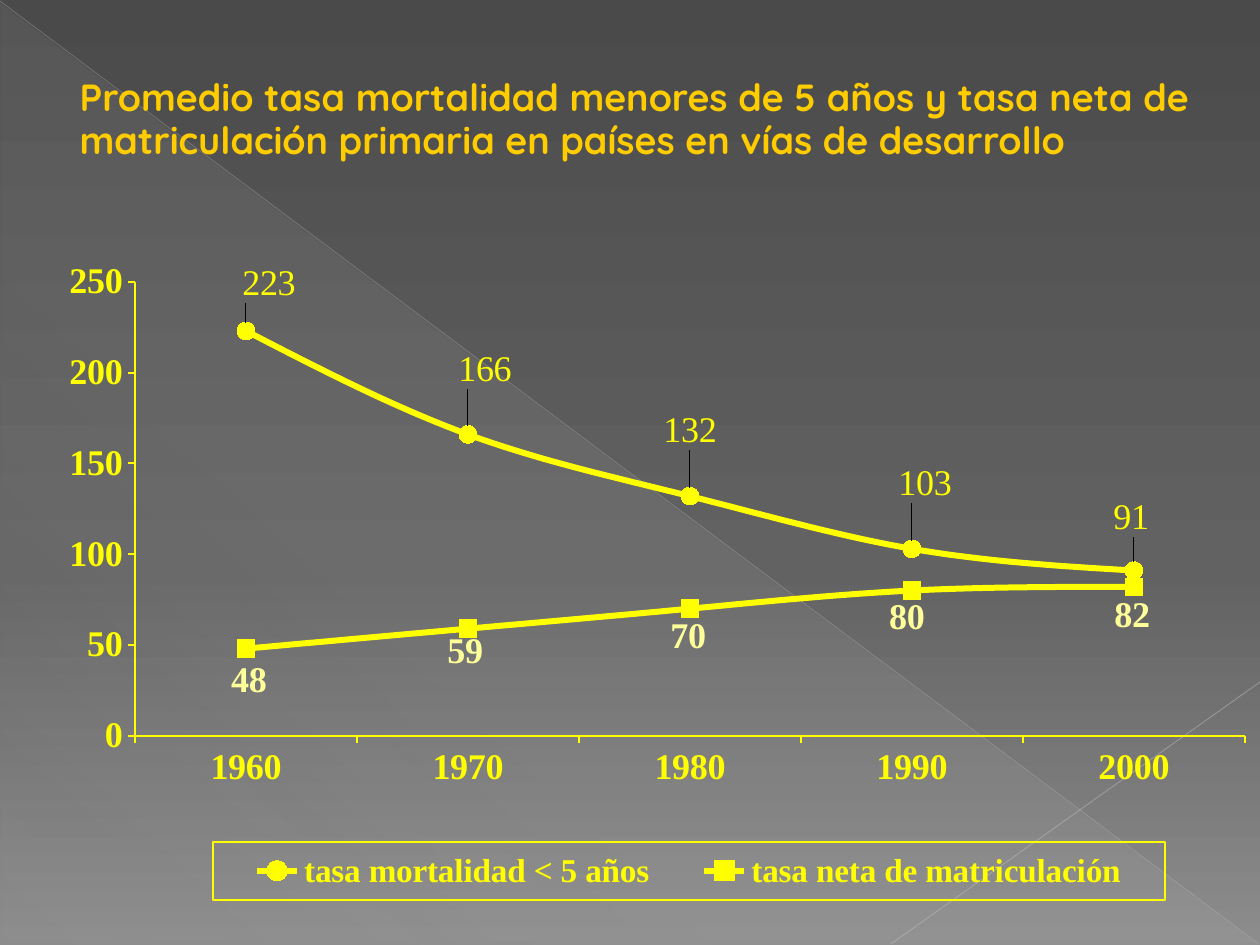
from lxml.etree import SubElement
from pptx import Presentation
from pptx.chart.data import CategoryChartData
from pptx.dml.color import RGBColor
from pptx.enum.chart import (XL_CHART_TYPE, XL_LABEL_POSITION, XL_LEGEND_POSITION,
                             XL_MARKER_STYLE, XL_TICK_MARK)
from pptx.enum.shapes import MSO_CONNECTOR, MSO_SHAPE
from pptx.enum.text import MSO_ANCHOR, MSO_AUTO_SIZE, PP_ALIGN
from pptx.oxml import parse_xml
from pptx.oxml.ns import nsdecls, qn
from pptx.util import Pt

SCALE = 914400 / 126
CHART_BOX = (32, 234, 1228, 670)
PLOT_BOX = (135, 282, 1110, 454)
KEY_BOX = (213, 842, 952, 58)
TITLE_FONT = "Quicksand"
CHART_FONT = "Times New Roman"

WHITE = RGBColor(0xFF, 0xFF, 0xFF)
GOLD = RGBColor(0xFF, 0xCC, 0x00)
YELLOW = RGBColor(0xFF, 0xFF, 0x00)
PALE = RGBColor(0xFF, 0xFF, 0x99)
DARK = RGBColor(0x4A, 0x4A, 0x4A)
MID = RGBColor(0x62, 0x62, 0x62)
LIGHT = RGBColor(0x8C, 0x8C, 0x8C)
MIST = RGBColor(0xD2, 0xD2, 0xD2)
SILVER = RGBColor(0xBF, 0xBF, 0xBF)
ASH = RGBColor(0xC6, 0xC6, 0xC6)

YEARS = ["1960", "1970", "1980", "1990", "2000"]
DEATHS = dict(name="tasa mortalidad < 5 años", vals=[223, 166, 132, 103, 91],
              mark=XL_MARKER_STYLE.CIRCLE, side=XL_LABEL_POSITION.ABOVE,
              color=YELLOW, bold=False,
              shifts=[(23, -14), (17, -31), (0, -32), (13, -32), (-3, -19)])
SCHOOL = dict(name="tasa neta de matriculación", vals=[48, 59, 70, 80, 82],
              mark=XL_MARKER_STYLE.SQUARE, side=XL_LABEL_POSITION.BELOW,
              color=PALE, bold=True,
              shifts=[(3, -1), (-3, -10), (-2, -5), (-5, -6), (-2, -5)])


def px(n):
    return round(n * SCALE)


def style(font, size, color, face=CHART_FONT, bold=True):
    font.size = Pt(size)
    font.name = face
    font.bold = bold
    font.color.rgb = color


def stroke(line, color, width):
    line.color.rgb = color
    line.width = Pt(width)


def shade(owner, fill, stops, angle):
    fill.gradient()
    fill.gradient_angle = angle
    group = next(owner.iter(qn("a:gsLst")))
    for stop in list(group):
        group.remove(stop)
    for place, color, alpha in stops:
        stop = SubElement(group, qn("a:gs"), pos=str(place * 1000))
        tint = SubElement(stop, qn("a:srgbClr"), val=str(color))
        if alpha < 100:
            SubElement(tint, qn("a:alpha"), val=str(alpha * 1000))


def add_wedge(slide):
    wedge = slide.shapes.add_shape(MSO_SHAPE.RIGHT_TRIANGLE, px(1), px(3), px(1258), px(942))
    wedge.shadow.inherit = False
    wedge.line.fill.background()
    shade(wedge.element, wedge.fill, [(0, MIST, 10), (70, MIST, 8), (100, MIST, 1)], 227)


def add_line(slide, ends, color, width, alpha):
    line = slide.shapes.add_connector(MSO_CONNECTOR.STRAIGHT, *map(px, ends))
    stroke(line.line, color, width)
    tint = next(line.element.spPr.iter(qn("a:srgbClr")))
    SubElement(tint, qn("a:alpha"), val=str(alpha * 1000))
    SubElement(line.element.spPr, qn("a:effectLst"))


def add_title(slide, text, **form):
    title = slide.shapes.title
    title.left, title.top, title.width, title.height = map(px, (0, 42, 1260, 157))
    frame = title.text_frame
    frame.word_wrap = True
    frame.auto_size = MSO_AUTO_SIZE.NONE
    frame.vertical_anchor = MSO_ANCHOR.MIDDLE
    para = frame.paragraphs[0]
    para.alignment = PP_ALIGN.LEFT
    para.line_spacing = 0.95
    props = para._p.get_or_add_pPr()
    props.set("marL", str(px(67)))
    props.set("indent", "0")
    run = para.add_run()
    run.text = text
    style(run.font, **form)
    slide.shapes._spTree.append(title.element)


def place(parent, index, values, modes=()):
    for old in parent.findall(qn("c:layout")):
        parent.remove(old)
    tags = [f'<c:{tag} val="{val}"/>' for tag, val in modes]
    tags += [f'<c:{tag} val="{val:.4f}"/>' for tag, val in zip("xywh", values)]
    parent.insert(index, parse_xml(
        f'<c:layout {nsdecls("c")}><c:manualLayout>{"".join(tags)}'
        '</c:manualLayout></c:layout>'))


def share(box):
    left, top, wide, high = CHART_BOX
    return ((box[0] - left) / wide, (box[1] - top) / high, box[2] / wide, box[3] / high)


def style_axis(axis):
    axis.has_major_gridlines = False
    axis.major_tick_mark = XL_TICK_MARK.OUTSIDE
    axis.minor_tick_mark = XL_TICK_MARK.NONE
    stroke(axis.format.line, YELLOW, 1.15)
    style(axis.tick_labels.font, 20.6, YELLOW)


def style_series(series, row):
    series.smooth = True
    stroke(series.format.line, YELLOW, 3.44)
    mark = series.marker
    mark.style = row["mark"]
    mark.size = 10
    mark.format.fill.solid()
    mark.format.fill.fore_color.rgb = YELLOW
    stroke(mark.format.line, YELLOW, 0.75)
    for i in range(len(YEARS)):
        label = series.points[i].data_label
        style(label.font, 20.6, row["color"], bold=row["bold"])
        label.position = row["side"]
    tags = series._element.iter(qn("c:dLbl"))
    for tag, (dx, dy) in zip(tags, row["shifts"]):
        place(tag, 1, (dx / CHART_BOX[2], dy / CHART_BOX[3]))


def add_legend(chart):
    chart.has_legend = True
    key = chart.legend
    key.position = XL_LEGEND_POSITION.BOTTOM
    key.include_in_layout = False
    style(key.font, 19, YELLOW)
    node = key._element
    place(node, 1, share(KEY_BOX), [("xMode", "edge"), ("yMode", "edge")])
    node.find(qn("c:overlay")).addnext(parse_xml(
        f'<c:spPr {nsdecls("c", "a")}><a:noFill/><a:ln w="{Pt(1.15)}"><a:solidFill>'
        f'<a:srgbClr val="{YELLOW}"/></a:solidFill></a:ln></c:spPr>'))


def add_chart(slide, rows):
    data = CategoryChartData()
    data.categories = YEARS
    for row in rows:
        data.add_series(row["name"], row["vals"])
    chart = slide.shapes.add_chart(
        XL_CHART_TYPE.LINE_MARKERS, *map(px, CHART_BOX), data).chart
    chart.has_title = False
    style(chart.font, 20.6, WHITE)
    chart.plots[0].vary_by_categories = False
    style_axis(chart.category_axis)
    scale = chart.value_axis
    style_axis(scale)
    scale.minimum_scale = 0
    scale.maximum_scale = 250
    scale.major_unit = 50
    for series, row in zip(chart.plots[0].series, rows):
        style_series(series, row)
    add_legend(chart)
    area = next(chart._chartSpace.iter(qn("c:plotArea")))
    place(area, 0, share(PLOT_BOX),
          [("layoutTarget", "inner"), ("xMode", "edge"), ("yMode", "edge")])


def main():
    deck = Presentation()
    deck.slide_width, deck.slide_height = px(1260), px(945)
    slide = deck.slides.add_slide(deck.slide_layouts[5])
    shade(slide.element, slide.background.fill,
          [(0, DARK, 100), (60, MID, 100), (100, LIGHT, 100)], 270)
    add_wedge(slide)
    add_line(slide, (0, 1, 1259, 944), SILVER, 0.39, 35)
    add_line(slide, (1260, 682, 891, 944), ASH, 0.47, 45)
    add_title(slide, "Promedio tasa mortalidad menores de 5 años y tasa neta de "
              "matriculación primaria en países en vías de desarrollo",
              size=21.6, color=GOLD, face=TITLE_FONT)
    add_chart(slide, [DEATHS, SCHOOL])
    deck.save("out.pptx")


if __name__ == "__main__":
    main()
